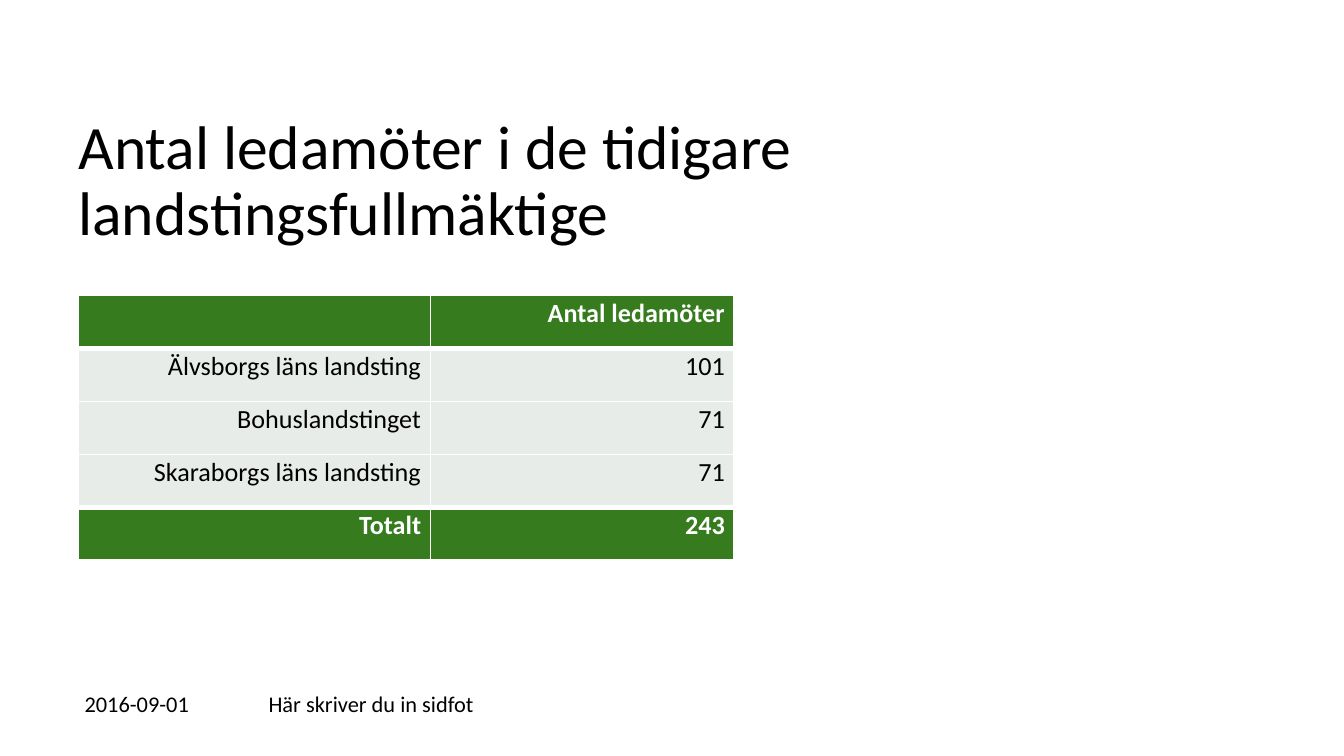
import dataclasses

import pptx
import pptx.dml.color
import pptx.enum.text
import pptx.oxml
import pptx.oxml.ns
import pptx.util

Pt = pptx.util.Pt
FONT = "Calibri"
COLORS = {"text": "000000", "white": "FFFFFF", "green": "367B1E", "pale": "E8ECE8"}
THIN, THICK = 1, 3


@dataclasses.dataclass(frozen=True)
class Row:
    label: str
    members: str
    emphasis: bool = False
    top: float = THIN
    bottom: float = THIN


@dataclasses.dataclass(frozen=True)
class FooterItem:
    text: str
    left: float
    width: float


ROWS = [
    Row("", "Antal ledamöter", emphasis=True, bottom=THICK),
    Row("Älvsborgs läns landsting", "101", top=THICK),
    Row("Bohuslandstinget", "71"),
    Row("Skaraborgs läns landsting", "71", bottom=THICK),
    Row("Totalt", "243", emphasis=True, top=THICK),
]
FOOTER = [
    FooterItem("2016-09-01", 38.2, 96.5),
    FooterItem("Här skriver du in sidfot", 136.8, 351.4),
]
COLUMN_WIDTHS = [188.6, 162.7]
ROW_HEIGHT = 28.35


def rgb(name: str) -> pptx.dml.color.RGBColor:
    return pptx.dml.color.RGBColor.from_string(COLORS[name])


def add_run(paragraph, text: str, size: float, color: str = "text", bold: bool = False) -> None:
    run = paragraph.add_run()
    run.text = text
    run.font.name = FONT
    run.font.size = Pt(size)
    run.font.bold = bold
    run.font.color.rgb = rgb(color)


def set_borders(cell, top: float, bottom: float) -> None:
    properties = cell._tc.get_or_add_tcPr()
    for side, width in (("L", THIN), ("R", THIN), ("T", top), ("B", bottom)):
        properties.append(pptx.oxml.parse_xml(
            f'<a:ln{side} {pptx.oxml.ns.nsdecls("a")} w="{Pt(width)}">'
            f'<a:solidFill><a:srgbClr val="{COLORS["white"]}"/></a:solidFill></a:ln{side}>'
        ))


def fill_cell(cell, text: str, row: Row) -> None:
    set_borders(cell, row.top, row.bottom)
    cell.fill.solid()
    cell.fill.fore_color.rgb = rgb("green" if row.emphasis else "pale")
    cell.margin_left = cell.margin_right = Pt(5)
    cell.margin_top = cell.margin_bottom = Pt(0)
    if text:
        paragraph = cell.text_frame.paragraphs[0]
        paragraph.alignment = pptx.enum.text.PP_ALIGN.RIGHT
        paragraph.line_spacing = 1.07
        add_run(paragraph, text, 14, "white" if row.emphasis else "text", row.emphasis)


def add_title(slide, text: str) -> None:
    title = slide.shapes.title
    title.left, title.top, title.width, title.height = Pt(42), Pt(57), Pt(636), Pt(81.4)
    frame = title.text_frame
    frame.auto_size = pptx.enum.text.MSO_AUTO_SIZE.NONE
    frame.vertical_anchor = pptx.enum.text.MSO_ANCHOR.MIDDLE
    frame.word_wrap = True
    frame.margin_left = frame.margin_right = frame.margin_top = frame.margin_bottom = Pt(0)
    paragraph = frame.paragraphs[0]
    paragraph.alignment = pptx.enum.text.PP_ALIGN.LEFT
    paragraph.line_spacing = 0.9
    add_run(paragraph, text, 33)


def add_members_table(slide) -> None:
    table = slide.shapes.add_table(
        len(ROWS), len(COLUMN_WIDTHS), Pt(42), Pt(158.4),
        Pt(sum(COLUMN_WIDTHS)), Pt(ROW_HEIGHT * len(ROWS)),
    ).table
    for column, width in zip(table.columns, COLUMN_WIDTHS):
        column.width = Pt(width)
    for index, row in enumerate(ROWS):
        table.rows[index].height = Pt(ROW_HEIGHT)
        for column, text in enumerate((row.label, row.members)):
            fill_cell(table.cell(index, column), text, row)


def add_footer_item(slide, item: FooterItem) -> None:
    frame = slide.shapes.add_textbox(Pt(item.left), Pt(366), Pt(item.width), Pt(21.6)).text_frame
    frame.word_wrap = True
    frame.vertical_anchor = pptx.enum.text.MSO_ANCHOR.MIDDLE
    add_run(frame.paragraphs[0], item.text, 12)


def main() -> None:
    presentation = pptx.Presentation()
    presentation.slide_width, presentation.slide_height = Pt(720), Pt(405)
    slide = presentation.slides.add_slide(presentation.slide_layouts[5])
    add_title(slide, "Antal ledamöter i de tidigare landstingsfullmäktige")
    add_members_table(slide)
    for item in FOOTER:
        add_footer_item(slide, item)
    presentation.save("out.pptx")


if __name__ == "__main__":
    main()
